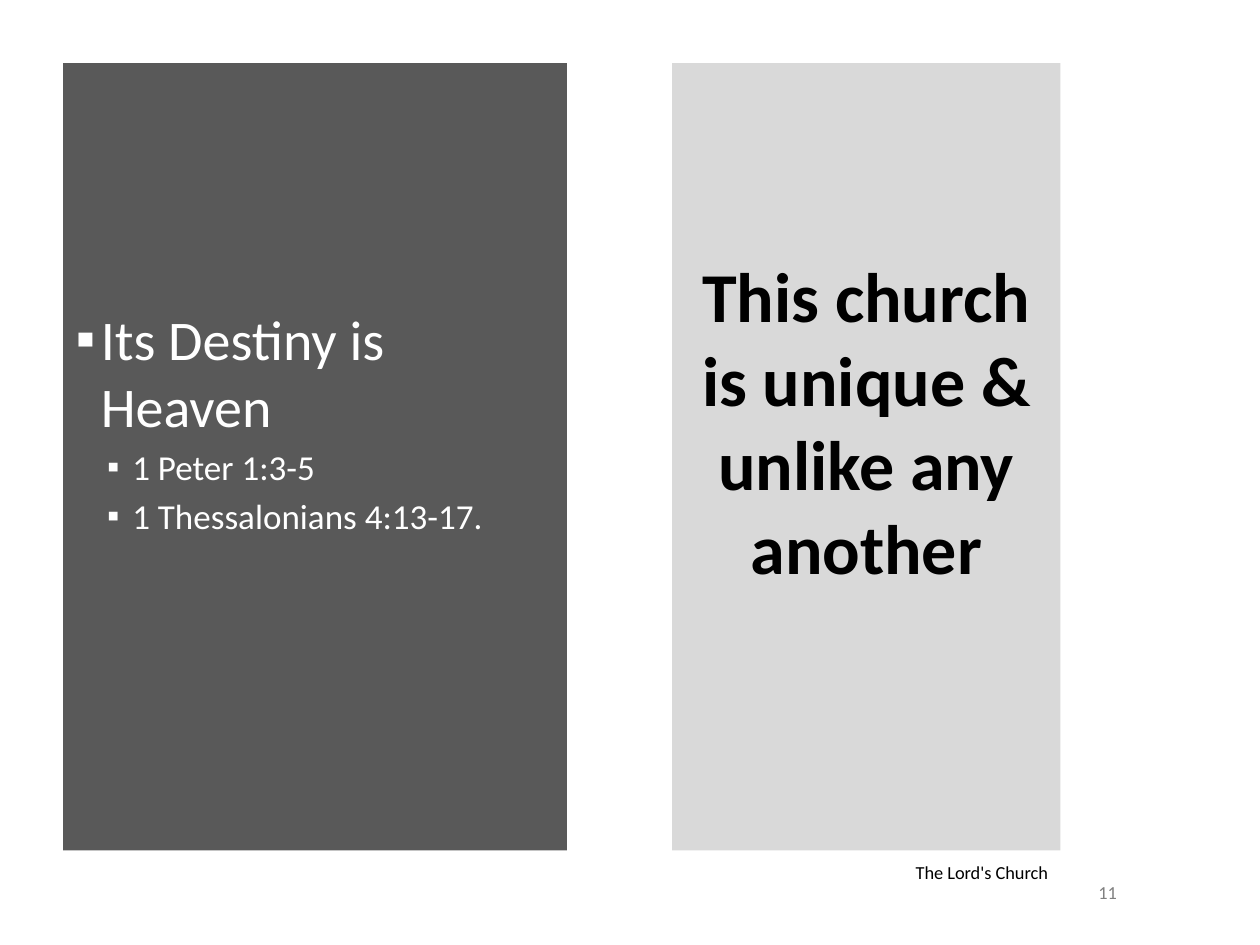
from lxml.etree import SubElement
from pptx import Presentation
from pptx.dml.color import RGBColor as RGB
from pptx.enum.text import MSO_ANCHOR as Anchor, MSO_AUTO_SIZE as AutoSize, PP_ALIGN as Align
from pptx.oxml.ns import qn
from pptx.util import Pt

FONT = "Calibri"
COLORS = {"dark": "595959", "light": "D9D9D9", "white": "FFFFFF",
          "black": "000000", "gray": "808080"}
POINTS = [("Its Destiny is Heaven", 0), ("1 Peter 1:3-5", 1), ("1 Thessalonians 4:13-17.", 1)]
LEVELS = [{"size": 32, "indent": 14.4}, {"size": 20, "indent": 32.4}]
HANG = 14.4


def color(name):
    return RGB.from_string(COLORS[name])


def place(sp, box):
    sp.left, sp.top, sp.width, sp.height = (Pt(v) for v in box)


def style(p, size, name, bold=False):
    for r in p.runs:
        r.font.name, r.font.size, r.font.bold = FONT, Pt(size), bold
        r.font.color.rgb = color(name)


def panel(sp, box, fill, anchor):
    """Turn a placeholder into a filled panel and return its text frame."""
    place(sp, box)
    sp.fill.solid()
    sp.fill.fore_color.rgb = color(fill)
    tf = sp.text_frame
    tf.word_wrap, tf.auto_size, tf.vertical_anchor = True, AutoSize.NONE, anchor
    return tf


def add_square_bullet(p, indent):
    pPr = p._p.get_or_add_pPr()
    pPr.set("marL", str(Pt(indent)))
    pPr.set("indent", str(-Pt(HANG)))
    bu_clr = SubElement(pPr, qn("a:buClr"))
    SubElement(bu_clr, qn("a:srgbClr"), val=COLORS["white"])
    SubElement(pPr, qn("a:buFont"), typeface="Arial")
    SubElement(pPr, qn("a:buChar"), char="▪")


def points_panel(sp, box):
    tf = panel(sp, box, "dark", Anchor.TOP)
    tf.margin_top = Pt(138)
    tf.text = "\n".join(text for text, _ in POINTS)
    for i, (p, (_, level)) in enumerate(zip(tf.paragraphs, POINTS)):
        size, indent = LEVELS[level]["size"], LEVELS[level]["indent"]
        p.level = level
        add_square_bullet(p, indent)
        p.space_before = Pt(0.2 * size if i else 0)
        style(p, size, "white")


def title_panel(sp, box):
    tf = panel(sp, box, "light", Anchor.MIDDLE)
    tf.margin_bottom = Pt(45)
    tf.text = "This church is unique & unlike any another"
    p = tf.paragraphs[0]
    p.alignment = Align.CENTER
    style(p, 40, "black", bold=True)


def small_text(s, box, text, name, align, anchor):
    tf = s.shapes.add_textbox(*(Pt(v) for v in box)).text_frame
    tf.word_wrap, tf.vertical_anchor = True, anchor
    tf.text = text
    p = tf.paragraphs[0]
    p.alignment = align
    style(p, 10.5, name)


def main():
    prs = Presentation()
    prs.slide_width, prs.slide_height = Pt(720), Pt(540)
    s = prs.slides.add_slide(prs.slide_layouts[1])
    points_panel(s.placeholders[1], (36, 36, 288, 450))
    title_panel(s.shapes.title, (384, 36, 222, 450))
    small_text(s, (612, 504, 42, 12), "11", "gray", Align.CENTER, Anchor.MIDDLE)
    small_text(s, (384, 496, 222, 12), "The Lord's Church", "black", Align.RIGHT, Anchor.BOTTOM)
    prs.save("out.pptx")


if __name__ == "__main__":
    main()
